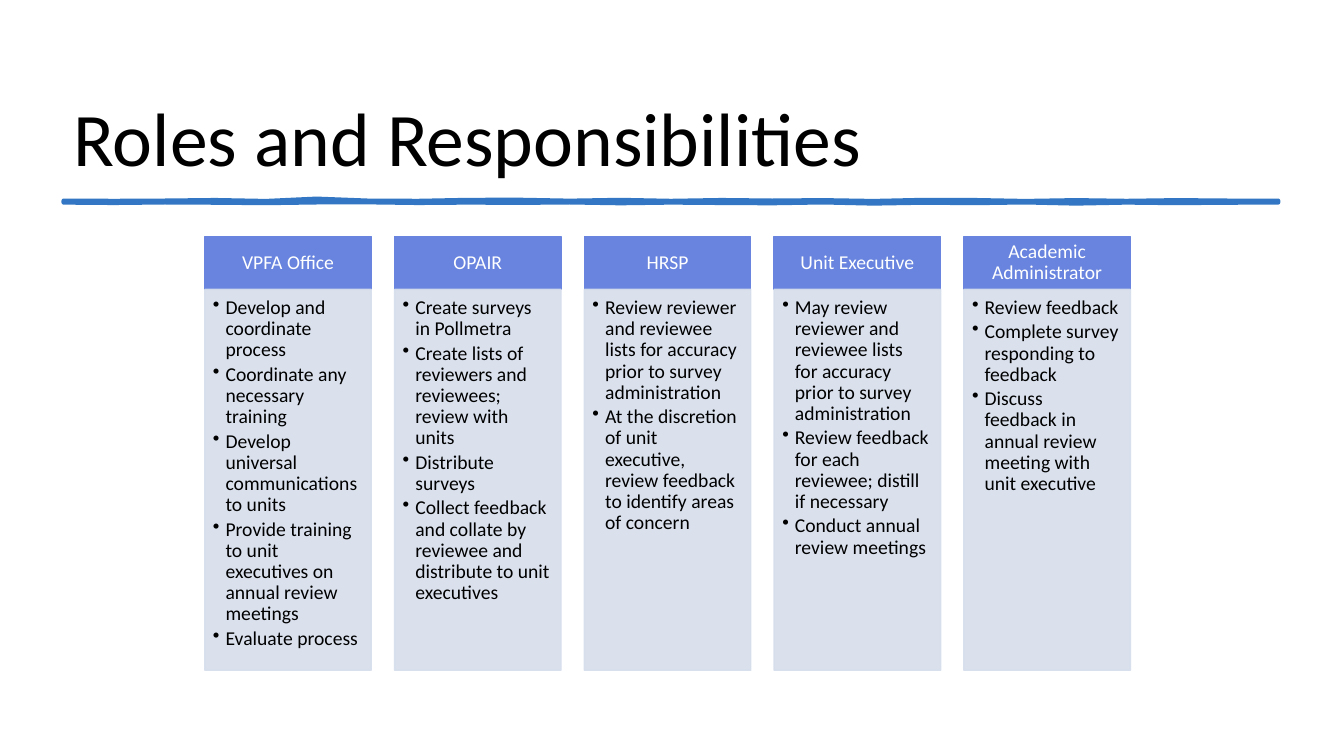
from dataclasses import dataclass

from lxml.etree import SubElement
from pptx import Presentation
from pptx.dml.color import RGBColor
from pptx.enum.shapes import MSO_SHAPE
from pptx.enum.text import MSO_ANCHOR, PP_ALIGN
from pptx.oxml.ns import qn
from pptx.util import Pt

FONT = "Calibri"
BLUE, PALE, INK = "6884DE", "D6DEEC", "3376C3"
BLACK, WHITE = "000000", "FFFFFF"


@dataclass
class Role:
    name: str
    tasks: list[str]


ROLES = [
    Role("VPFA Office", [
        "Develop and coordinate process",
        "Coordinate any necessary training",
        "Develop universal communications to units",
        "Provide training to unit executives on annual review meetings",
        "Evaluate process",
    ]),
    Role("OPAIR", [
        "Create surveys in Pollmetra",
        "Create lists of reviewers and reviewees; review with units",
        "Distribute surveys",
        "Collect feedback and collate by reviewee and distribute to unit executives",
    ]),
    Role("HRSP", [
        "Review reviewer and reviewee lists for accuracy prior to survey administration",
        "At the discretion of unit executive, review feedback to identify areas of concern",
    ]),
    Role("Unit Executive", [
        "May review reviewer and reviewee lists for accuracy prior to survey administration",
        "Review feedback for each reviewee; distill if necessary",
        "Conduct annual review meetings",
    ]),
    Role("Academic Administrator", [
        "Review feedback",
        "Complete survey responding to feedback",
        "Discuss feedback in annual review meeting with unit executive",
    ]),
]

# Column grid
LEFT, STEP, WIDTH = 146.3, 135.55, 118.9
TOP, HEAD, BODY = 169.1, 37.6, 272.1

# Hand-drawn rule: height of each edge at equal steps
RULE_X, RULE_Y, RULE_W = 45.4, 143.3, 867.6
UPPER = [0, .2, 0, -.4, .3, -1.4, 0, .2, -.5, -.6, .1, -.5, .2,
         -.4, 0, -.3, .3, -.5, -.4, .3, -.3, .2, -.3, 0, 0]
LOWER = [1.4, 1.7, 1.3, 1.5, 1.8, 1.3, 1.2, 1.7, 1.4, 1.6, 1.3, 1.9, 1.4,
         1.7, 1.9, 1.3, 2.1, 1.5, 1.8, 1.3, 2.1, 1.4, 1.8, 1.5, 1.4]


def rgb(code: str) -> RGBColor:
    return RGBColor.from_string(code)


def paint(shape, color: str, width: float, alpha: int = 100) -> None:
    shape.shadow.inherit = False
    shape.line.width = Pt(width)
    for fill in (shape.fill, shape.line.fill):
        fill.solid()
        fill.fore_color.rgb = rgb(color)
    if alpha < 100:
        for node in list(shape.element.spPr.iter(qn("a:srgbClr"))):
            SubElement(node, qn("a:alpha"), val=str(alpha * 1000))


def frame(shape, anchor, insets: tuple):
    text = shape.text_frame
    text.word_wrap = True
    text.vertical_anchor = anchor
    (text.margin_left, text.margin_top,
     text.margin_right, text.margin_bottom) = map(Pt, insets)
    return text


def style(para, size: float, color: str, align=PP_ALIGN.LEFT) -> None:
    para.alignment = align
    para.line_spacing = 0.9
    para.font.name = FONT
    para.font.size = Pt(size)
    para.font.color.rgb = rgb(color)


def bullet(para) -> None:
    props = para._p.get_or_add_pPr()
    props.set("marL", str(Pt(9)))
    props.set("indent", str(-Pt(9)))
    SubElement(props, qn("a:buChar"), char="•")
    para.space_after = Pt(2.3)


def box(slide, x: float, y: float, high: float):
    return slide.shapes.add_shape(
        MSO_SHAPE.RECTANGLE, Pt(x), Pt(y), Pt(WIDTH), Pt(high))


def column(slide, x: float, role: Role) -> None:
    head = box(slide, x, TOP, HEAD)
    paint(head, BLUE, 1)
    text = frame(head, MSO_ANCHOR.MIDDLE, (7.9, 4.3, 7.9, 4.3))
    text.text = role.name
    style(text.paragraphs[0], 14, WHITE, PP_ALIGN.CENTER)

    body = box(slide, x, TOP + HEAD, BODY)
    paint(body, PALE, 1, 90)
    text = frame(body, MSO_ANCHOR.TOP, (5.8, 5.8, 7.9, 8.6))
    text.text = "\n".join(role.tasks)
    for para in text.paragraphs:
        style(para, 14, BLACK)
        bullet(para)


def rule(slide) -> None:
    gap = RULE_W / (len(UPPER) - 1)
    edges = [[(Pt(RULE_X + i * gap), Pt(RULE_Y + dy))
              for i, dy in enumerate(edge)] for edge in (UPPER, LOWER)]
    points = edges[0] + edges[1][::-1]
    form = slide.shapes.build_freeform(*points[0])
    form.add_line_segments(points[1:], close=True)
    paint(form.convert_to_shape(), INK, 3)


def main() -> None:
    deck = Presentation()
    deck.slide_width, deck.slide_height = Pt(960), Pt(540)
    slide = deck.slides.add_slide(deck.slide_layouts[6])
    slide.background.fill.solid()
    slide.background.fill.fore_color.rgb = rgb(WHITE)

    # Title and rule
    title = slide.shapes.add_textbox(Pt(45.4), Pt(18.7), Pt(867.6), Pt(113))
    text = frame(title, MSO_ANCHOR.BOTTOM, (7.2, 3.6, 7.2, 1))
    text.text = "Roles and Responsibilities"
    style(text.paragraphs[0], 54, BLACK)
    rule(slide)

    # Role columns
    for i, role in enumerate(ROLES):
        column(slide, LEFT + i * STEP, role)
    deck.save("out.pptx")


if __name__ == "__main__":
    main()
